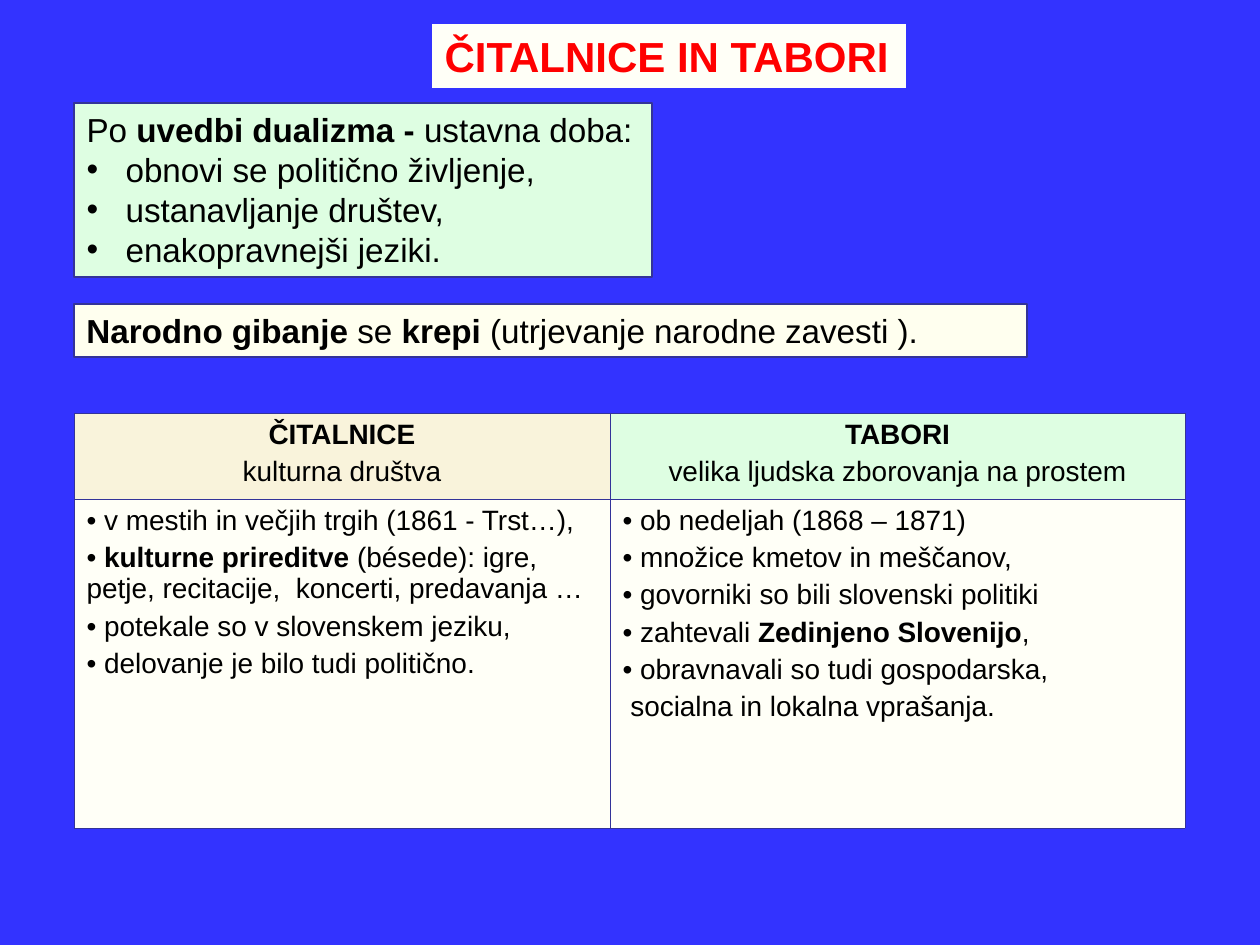
"""Build the slide on reading societies and open-air rallies."""
from dataclasses import dataclass
from typing import NamedTuple

from lxml import etree
from pptx import Presentation
from pptx import util as u
from pptx.dml.color import RGBColor
from pptx.enum import text
from pptx.oxml import ns


@dataclass(frozen=True)
class Theme:
    font: str = "Arial"
    background: str = "3333FF"
    ink: str = "000000"
    title_ink: str = "FF0000"
    edge: str = "333399"
    ivory: str = "FFFFF7"
    cream: str = "FFFFEF"
    mint: str = "DEFEE2"
    sand: str = "F9F3DB"
    title_size: int = 24
    body_size: int = 19
    table_size: int = 16
    table_gap: float = 3.5
    box_line: float = 0.75
    grid_line: float = 0.25


class Frame(NamedTuple):
    left: int
    top: int
    width: int
    height: int


class Cell(NamedTuple):
    fill: str
    align: text.PP_ALIGN
    lines: list[str]


THEME = Theme()
LIST_INDENT = 39
COLUMNS, ROWS = (536, 575), (86, 329)
CENTER, LEFT = text.PP_ALIGN.CENTER, text.PP_ALIGN.LEFT

CELLS = [
    [
        Cell(THEME.sand, CENTER, ["**ČITALNICE**", "kulturna društva"]),
        Cell(THEME.mint, CENTER, ["**TABORI**", "velika ljudska zborovanja na prostem"]),
    ],
    [
        Cell(THEME.ivory, LEFT, [
            "• v mestih in večjih trgih (1861 - Trst…),",
            "• **kulturne prireditve **(bésede): igre, petje, recitacije,  koncerti, predavanja …",
            "• potekale so v slovenskem jeziku,",
            "• delovanje je bilo tudi politično.",
        ]),
        Cell(THEME.ivory, LEFT, [
            "• ob nedeljah (1868 – 1871)",
            "• množice kmetov in meščanov,",
            "• govorniki so bili slovenski politiki",
            "• zahtevali **Zedinjeno Slovenijo**,",
            "• obravnavali so tudi gospodarska,",
            " socialna in lokalna vprašanja.",
        ]),
    ],
]


def px(length: int) -> u.Emu:
    """Turn pixels into EMU."""
    return u.Emu(round(length * 914400 / 126))


def rgb(value: str) -> RGBColor:
    """Read a hex colour."""
    return RGBColor.from_string(value)


def apply(target, values: dict) -> None:
    """Set every attribute named in the format values."""
    for name, value in values.items():
        setattr(target, name, value)


def paint(target, color: str) -> None:
    """Give a solid fill."""
    target.fill.solid()
    target.fill.fore_color.rgb = rgb(color)


def write(frame, lines: list[str], size: int, color: str = THEME.ink,
          align: text.PP_ALIGN = LEFT, gap: float = 0) -> None:
    """Write lines in which double asterisks enclose bold words."""
    for number, line in enumerate(lines):
        para = frame.add_paragraph() if number else frame.paragraphs[0]
        apply(para, {"alignment": align, "space_before": u.Pt(gap)})
        for part, words in enumerate(line.split("**")):
            if words:
                span = para.add_run()
                span.text = words
                apply(span.font, {"name": THEME.font, "size": u.Pt(size), "bold": part % 2 == 1})
                span.font.color.rgb = rgb(color)


def style_box(box, place: Frame, fill: str, edge: str | None = None) -> None:
    """Place and format a text-bearing box."""
    apply(box, {name: px(length) for name, length in place._asdict().items()})
    apply(box.text_frame, {
        "word_wrap": True,
        "auto_size": text.MSO_AUTO_SIZE.NONE,
        "vertical_anchor": text.MSO_ANCHOR.TOP,
    })
    paint(box, fill)
    if edge:
        box.line.color.rgb = rgb(edge)
        box.line.width = u.Pt(THEME.box_line)


def indent_list(paragraphs) -> None:
    """Leave the lead line plain and hang the bullets below it."""
    for number, para in enumerate(paragraphs):
        hang = px(LIST_INDENT) if number else 0
        properties = para._p.get_or_add_pPr()
        properties.set("marL", str(hang))
        properties.set("indent", str(-hang))
        if not number:
            etree.SubElement(properties, ns.qn("a:buNone"))


def outline_cell(cell) -> None:
    """Draw the four borders of a table cell."""
    properties = cell._tc.get_or_add_tcPr()
    for index, side in enumerate(("lnL", "lnR", "lnT", "lnB")):
        border = etree.Element(ns.qn(f"a:{side}"), w=str(u.Pt(THEME.grid_line)))
        fill = etree.SubElement(border, ns.qn("a:solidFill"))
        etree.SubElement(fill, ns.qn("a:srgbClr"), val=THEME.edge)
        properties.insert(index, border)


def draw_table(page, left: int, top: int) -> None:
    """Draw the comparison table."""
    table = page.shapes.add_table(
        len(ROWS), len(COLUMNS), px(left), px(top), px(sum(COLUMNS)), px(sum(ROWS))).table
    apply(table, {"first_row": False, "horz_banding": False})
    for column, width in zip(table.columns, COLUMNS):
        column.width = px(width)
    for row, height, contents in zip(table.rows, ROWS, CELLS):
        row.height = px(height)
        for cell, content in zip(row.cells, contents):
            paint(cell, content.fill)
            outline_cell(cell)
            write(cell.text_frame, content.lines, THEME.table_size,
                  align=content.align, gap=THEME.table_gap)


def main() -> None:
    """Build and save the deck."""
    deck = Presentation()
    apply(deck, {"slide_width": px(1260), "slide_height": px(945)})
    page = deck.slides.add_slide(deck.slide_layouts[1])
    paint(page.background, THEME.background)

    title, body = page.placeholders
    style_box(title, Frame(432, 24, 474, 64), THEME.ivory)
    write(title.text_frame, ["**ČITALNICE IN TABORI**"], THEME.title_size, THEME.title_ink)

    style_box(body, Frame(74, 103, 578, 174), THEME.mint, THEME.edge)
    write(body.text_frame, [
        "Po **uvedbi dualizma - **ustavna doba:",
        "obnovi se politično življenje,",
        "ustanavljanje društev,",
        "enakopravnejši jeziki.",
    ], THEME.body_size)
    indent_list(body.text_frame.paragraphs)

    statement = page.shapes.add_textbox(0, 0, 0, 0)
    style_box(statement, Frame(74, 304, 953, 53), THEME.cream, THEME.edge)
    write(statement.text_frame,
          ["**Narodno gibanje** se **krepi** (utrjevanje narodne zavesti )."], THEME.body_size)

    draw_table(page, 74, 413)
    deck.save("out.pptx")


if __name__ == "__main__":
    main()
